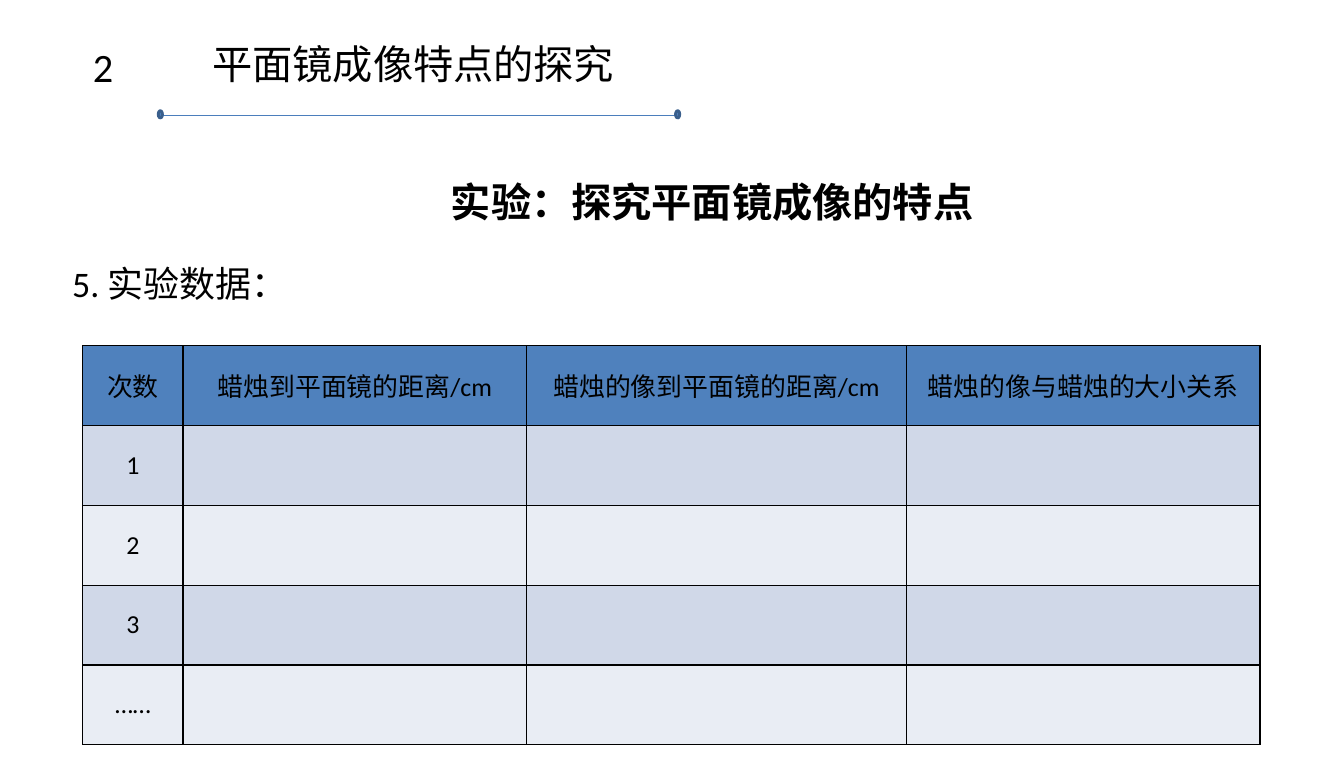
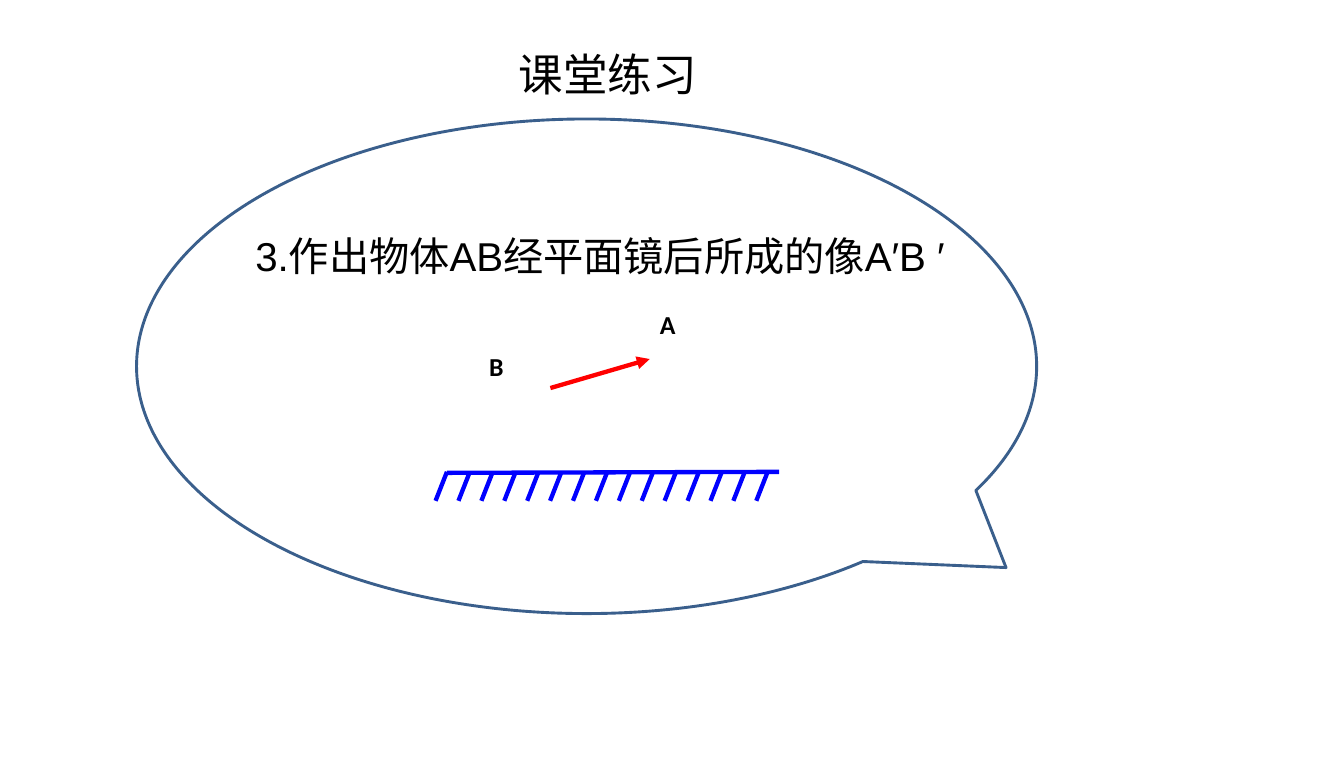
"""Build two physics lesson slides: a mirror experiment table and a drawing exercise."""
from pptx import Presentation
from pptx.dml.color import RGBColor
from pptx.enum.shapes import MSO_CONNECTOR, MSO_SHAPE
from pptx.enum.text import MSO_ANCHOR as ANCHOR, PP_ALIGN as ALIGN
from pptx.oxml.ns import qn
from pptx.util import Inches, Pt
from lxml.etree import SubElement

COLORS = {
    "text": "000000",
    "white": "FFFFFF",
    "accent": "4F81BD",
    "outline": "3A5F8C",
    "rule": "4B7EBC",
    "band_dark": "D0D8E8",
    "band_light": "E9EDF4",
    "mirror": "0000FF",
    "arrow": "FF0000",
}
COLORS_RGB = {name: RGBColor.from_string(value) for name, value in COLORS.items()}


def write_text(frame, text, size=28, font="Calibri", bold=False, align=ALIGN.LEFT,
               anchor=ANCHOR.TOP, wrap=True, line_spacing=None):
    frame.word_wrap = wrap
    frame.vertical_anchor = anchor
    paragraph = frame.paragraphs[0]
    paragraph.alignment = align
    paragraph.line_spacing = line_spacing
    run = paragraph.add_run()
    run.text = text
    run.font.size = Pt(size)
    run.font.name = font
    run.font.bold = bold
    run.font.color.rgb = COLORS_RGB["text"]


def add_line(slide, start, end, color, width, arrow=False):
    line = slide.shapes.add_connector(MSO_CONNECTOR.STRAIGHT, *map(Inches, start + end))
    line.line.color.rgb = COLORS_RGB[color]
    line.line.width = Pt(width)
    properties = line._element.spPr
    if arrow:
        SubElement(properties.find(qn("a:ln")), qn("a:tailEnd"), type="triangle")
    SubElement(properties, qn("a:effectLst"))


presentation = Presentation()
presentation.slide_width = Inches(12.99)
presentation.slide_height = Inches(7.48)
blank = presentation.slide_layouts[6]
data_slide = presentation.slides.add_slide(blank)
exercise_slide = presentation.slides.add_slide(blank)

add_line(data_slide, (1.56, 1.12), (6.53, 1.12), "rule", 0.75)
outlined = [
    data_slide.shapes.add_shape(
        MSO_SHAPE.OVAL, Inches(left), Inches(1.07), Inches(0.04), Inches(0.07))
    for left in (1.53, 6.53)
]
for dot in outlined:
    dot.fill.solid()
    dot.fill.fore_color.rgb = COLORS_RGB["accent"]

callout = exercise_slide.shapes.add_shape(
    MSO_SHAPE.OVAL_CALLOUT, Inches(1.32), Inches(1.15), Inches(8.7), Inches(4.78))
callout.adjustments[0] = 0.466
callout.adjustments[1] = 0.407
callout.fill.solid()
callout.fill.fore_color.rgb = COLORS_RGB["white"]

for shape in outlined + [callout]:
    shape.shadow.inherit = False
    shape.line.color.rgb = COLORS_RGB["outline"]
    shape.line.width = Pt(2)

title_style = {"align": ALIGN.CENTER, "anchor": ANCHOR.MIDDLE}
label_style = {"size": 18, "bold": True}
texts = [
    (data_slide, "平面镜成像特点的探究", (1.73, 0.28, 4.53, 0.67), title_style),
    (data_slide, "2", (0.8, 0.36, 0.4, 0.57), {"wrap": False}),
    (data_slide, "实验：探究平面镜成像的特点", (4.26, 1.66, 5.45, 0.57), {"bold": True}),
    (data_slide, "5. 实验数据：", (0.6, 2.48, 2.77, 0.52), {"size": 25}),
    (exercise_slide, "课堂练习", (3.61, 0.38, 4.53, 0.67), {"size": 31, **title_style}),
    (exercise_slide, "3.作出物体AB经平面镜后所成的像A′B ′", (2.37, 1.95, 7.65, 0.81),
     {"font": "Arial", "line_spacing": 1.5}),
    (exercise_slide, "B", (4.63, 3.34, 0.83, 0.4), label_style),
    (exercise_slide, "A", (6.28, 2.93, 0.83, 0.4), label_style),
]
for slide, text, box, style in texts:
    textbox = slide.shapes.add_textbox(*map(Inches, box))
    write_text(textbox.text_frame, text, **style)

headers = ["次数", "蜡烛到平面镜的距离/cm", "蜡烛的像到平面镜的距离/cm", "蜡烛的像与蜡烛的大小关系"]
rows = [headers] + [[trial, "", "", ""] for trial in ("1", "2", "3", "……")]
table = data_slide.shapes.add_table(
    len(rows), len(headers), Inches(0.8), Inches(3.34), Inches(11.38), Inches(3.86)).table
for column, width in zip(table.columns, (0.97, 3.32, 3.67, 3.42)):
    column.width = Inches(width)
for row_index, values in enumerate(rows):
    band = "accent" if row_index == 0 else ("band_light", "band_dark")[row_index % 2]
    for column_index, value in enumerate(values):
        cell = table.cell(row_index, column_index)
        cell_properties = cell._tc.get_or_add_tcPr()
        for side in ("a:lnL", "a:lnR", "a:lnT", "a:lnB"):
            border = SubElement(cell_properties, qn(side), w=str(Pt(1)))
            border_fill = SubElement(border, qn("a:solidFill"))
            SubElement(border_fill, qn("a:srgbClr"), val=COLORS["text"])
        cell.fill.solid()
        cell.fill.fore_color.rgb = COLORS_RGB[band]
        cell.vertical_anchor = ANCHOR.MIDDLE
        if value:
            write_text(cell.text_frame, value, size=18, align=ALIGN.CENTER,
                       anchor=ANCHOR.MIDDLE)

add_line(exercise_slide, (4.32, 4.57), (7.53, 4.56), "mirror", 3)
hatch_count = 15
hatch_step = (7.42 - 4.32) / (hatch_count - 1)
for index in range(hatch_count):
    hatch_x = 4.32 + index * hatch_step
    add_line(exercise_slide, (hatch_x, 4.56), (hatch_x - 0.11, 4.84), "mirror", 3)
add_line(exercise_slide, (5.32, 3.75), (6.28, 3.47), "arrow", 3, arrow=True)

presentation.save("out.pptx")
